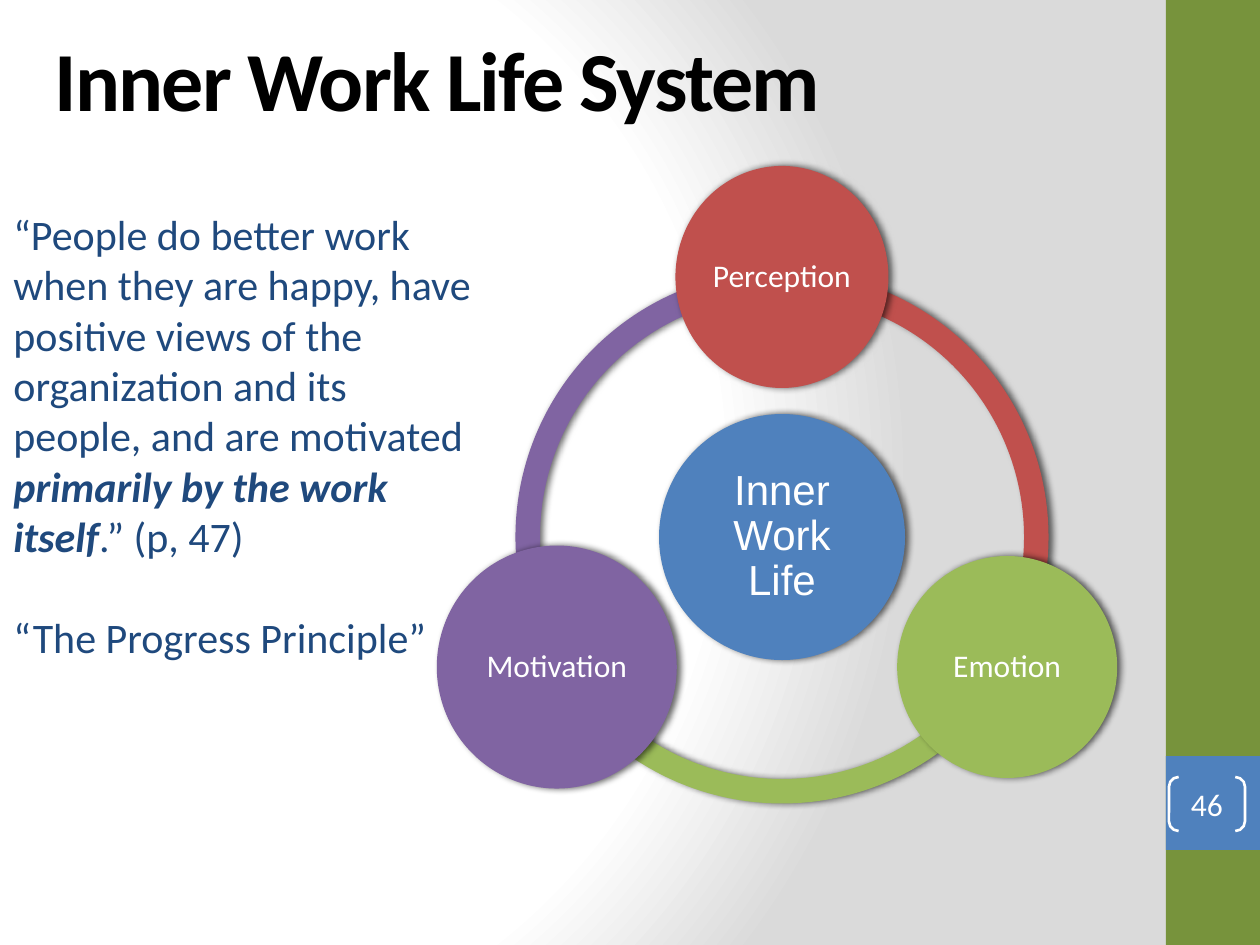
from dataclasses import dataclass
from math import cos, radians, sin

from lxml import etree
from pptx import Presentation
from pptx.dml.color import RGBColor
from pptx.enum.shapes import MSO_SHAPE
from pptx.enum.text import MSO_ANCHOR, PP_ALIGN
from pptx.oxml import parse_xml
from pptx.oxml.ns import nsdecls, qn
from pptx.slide import Slide
from pptx.util import Pt

EMU_PER_PX = 914400 / 126
WHITE, BLACK, NAVY = "FFFFFF", "000000", "1F497D"
BLUE, RED, GREEN, PURPLE, OLIVE = "4F81BD", "C0504D", "9BBB59", "8064A2", "77933C"


def px(*lengths):
    return [round(length * EMU_PER_PX) for length in lengths]


def rgb(color):
    return RGBColor.from_string(color)


def write(paragraph, text, size=24, color=WHITE, font="Calibri", bold=False, italic=False, spacing=None):
    run = paragraph.add_run()
    run.text = text
    run.font.size = Pt(size)
    run.font.name = font
    run.font.bold = bold
    run.font.italic = italic
    run.font.color.rgb = rgb(color)
    if spacing is not None:
        run.font._element.set("spc", str(spacing * 100))


@dataclass
class Page:
    slide: Slide
    shadow_alpha: int = 60
    shadow_blur: int = 4
    shadow_distance: int = 2

    def background(self, stops):
        self.slide.background.fill.solid()
        gradient_stops = "".join(
            f'<a:gs pos="{position * 1000}"><a:srgbClr val="{color}"/></a:gs>' for position, color in stops
        )
        gradient = parse_xml(
            f'<a:gradFill {nsdecls("a")} rotWithShape="1"><a:gsLst>{gradient_stops}</a:gsLst>'
            '<a:path path="circle"><a:fillToRect l="20000" t="50000" r="100000" b="50000"/></a:path></a:gradFill>'
        )
        solid = self.slide._element.find(".//" + qn("p:bgPr")).find(qn("a:solidFill"))
        solid.getparent().replace(solid, gradient)

    def shape(self, kind, box, fill=None, line=None, adjustments=(), shadow=False):
        shape = self.slide.shapes.add_shape(kind, *px(*box))
        shape.shadow.inherit = False
        for index, value in enumerate(adjustments):
            shape.adjustments[index] = value
        if fill:
            shape.fill.solid()
            shape.fill.fore_color.rgb = rgb(fill)
        else:
            shape.fill.background()
        if line:
            shape.line.color.rgb = rgb(line)
            shape.line.width = Pt(1.5)
        else:
            shape.line.fill.background()
        if shadow:
            self.add_shadow(shape)
        return shape

    def add_shadow(self, shape):
        effects = shape._element.spPr.find(qn("a:effectLst"))
        outer = etree.SubElement(
            effects, qn("a:outerShdw"), blurRad=str(int(Pt(self.shadow_blur))),
            dist=str(int(Pt(self.shadow_distance))), dir="0", rotWithShape="0",
        )
        black = etree.SubElement(outer, qn("a:srgbClr"), val=BLACK)
        etree.SubElement(black, qn("a:alpha"), val=str(self.shadow_alpha * 1000))

    def label(self, shape, text, inset=0, line_spacing=None, **style):
        frame = shape.text_frame
        frame.word_wrap = True
        frame.vertical_anchor = MSO_ANCHOR.MIDDLE
        frame.margin_left = frame.margin_top = frame.margin_right = frame.margin_bottom = px(inset)[0]
        paragraph = frame.paragraphs[0]
        paragraph.alignment = PP_ALIGN.CENTER
        paragraph.line_spacing = line_spacing
        write(paragraph, text, **style)

    def circle(self, center, diameters, color, text, **style):
        (x, y), (width, height) = center, diameters
        box = (x - width / 2, y - height / 2, width, height)
        circle = self.shape(MSO_SHAPE.OVAL, box, color, shadow=True)
        self.label(circle, text, inset=4, line_spacing=0.9, **style)

    def text(self, box, paragraphs, gap=0, **style):
        frame = self.slide.shapes.add_textbox(*px(*box)).text_frame
        frame.word_wrap = True
        for index, runs in enumerate(paragraphs):
            paragraph = frame.add_paragraph() if index else frame.paragraphs[0]
            if index:
                paragraph.space_before = Pt(gap)
            for text, emphasis in runs:
                write(paragraph, text, **style, **emphasis)


def main():
    presentation = Presentation()
    presentation.slide_width, presentation.slide_height = px(1260, 945)
    page = Page(presentation.slides.add_slide(presentation.slide_layouts[6]))

    page.background([(0, WHITE), (75, WHITE), (100, "DADADA")])
    page.shape(MSO_SHAPE.RECTANGLE, (1166, 0, 94, 945), OLIVE)
    page.shape(MSO_SHAPE.RECTANGLE, (1166, 756, 94, 94), BLUE)

    quote = [
        ("“People do better work when they are happy, have positive views of the organization "
         "and its people, and are motivated ", {}),
        ("primarily by the work itself", {"bold": True, "italic": True}),
        (".” (p, 47)", {}),
    ]
    source = [("“The Progress Principle”", {})]
    page.text((1, 202, 483, 471), [quote, source], gap=29, color=NAVY)

    center_x, center_y, orbit, ring = 782, 537, 260, 533
    ring_box = (center_x - ring / 2, center_y - ring / 2, ring, ring)
    for start, end, color in [(90, 162, PURPLE), (18, 90, GREEN), (162, 18, RED)]:
        page.shape(MSO_SHAPE.BLOCK_ARC, ring_box, color, adjustments=(start, end, 0.046), shadow=True)

    page.circle((center_x, center_y), (246, 246), BLUE, "Inner Work Life", font="Arial")
    factors = [
        ("Perception", -90, (213, 222), RED),
        ("Emotion", 30, (220, 222), GREEN),
        ("Motivation", 150, (240, 243), PURPLE),
    ]
    for factor, degrees, diameters, color in factors:
        angle = radians(degrees)
        center = (center_x + orbit * cos(angle), center_y + orbit * sin(angle))
        page.circle(center, diameters, color, factor, size=18)

    page_number = page.shape(MSO_SHAPE.DOUBLE_BRACKET, (1169, 777, 76, 54), line=WHITE, adjustments=(0.179,))
    page.label(page_number, "46", size=18)
    title = [("Inner Work Life System", {"bold": True})]
    page.text((42, 21, 1050, 158), [title], size=48, color=BLACK, spacing=-1)

    presentation.save("out.pptx")


if __name__ == "__main__":
    main()
